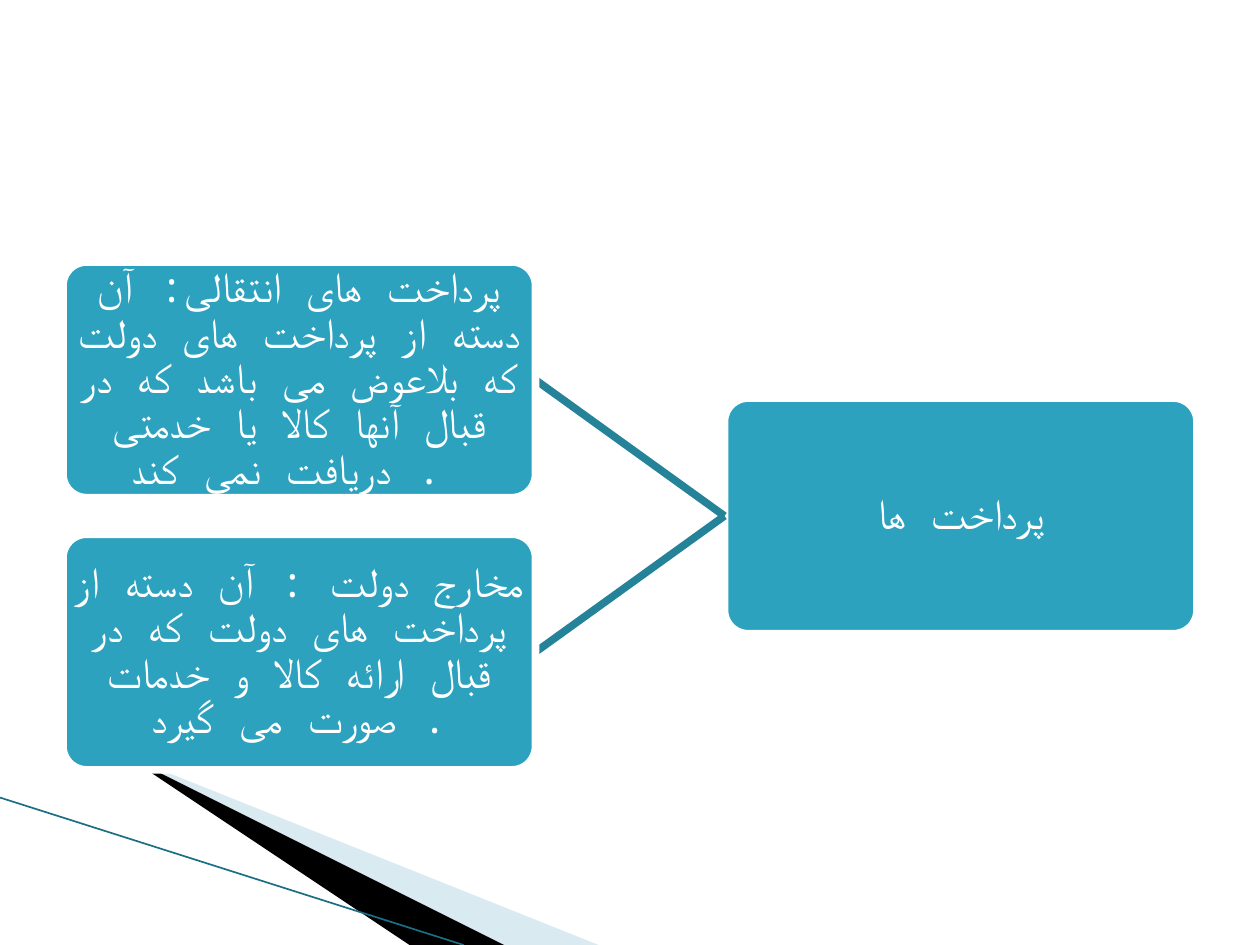
"""Build a slide that splits payments into two kinds."""
from lxml import etree
from pptx import Presentation
from pptx import util as u
from pptx.dml.color import RGBColor
from pptx.enum import shapes, text
from pptx.oxml.ns import qn

WIDE, HIGH = 10, 7.5
BOX_W, BOX_H = 3.75, 1.87
LEFT, RIGHT = 0.5, 5.75
TOP, STEP = 2.08, 2.16
FONT = "Noto Sans Mono"
HUES = {"box": "2DA2BF", "link": "248299", "edge": "FFFFFF",
        "pale": "A0CBDC", "dark": "000000", "rim": "1B6F83"}
FRAME = {"word_wrap": True, "vertical_anchor": text.MSO_ANCHOR.MIDDLE,
         **{f"margin_{side}": u.Inches(0.02)
            for side in ("left", "right", "top", "bottom")}}
PARA = {"alignment": text.PP_ALIGN.CENTER, "line_spacing": 0.9}
TYPE = {"name": FONT, "size": u.Pt(24)}
ROOT = "پرداخت ها"
KINDS = [
    "پرداخت های انتقالی: آن دسته از پرداخت های دولت که بلاعوض می باشد "
    "که در قبال آنها کالا یا خدمتی دریافت نمی کند . ",
    "مخارج دولت : آن دسته از پرداخت های دولت که در قبال ارائه کالا و "
    "خدمات صورت می گیرد .",
]
WEDGES = [
    ("pale", 40, [(0.55, 6.5), (5.9, HIGH), (4.56, HIGH)]),
    ("dark", 100, [(0.53, 6.49), (4.53, HIGH), (3.68, HIGH)]),
]


def hue(name):
    """Return a named colour."""
    return RGBColor.from_string(HUES[name])


def style(item, form):
    """Set the attributes of an item from a dict."""
    for key, value in form.items():
        setattr(item, key, value)


def wedge(slide, name, alpha, points):
    """Draw a filled outline through the points."""
    pen = slide.shapes.build_freeform(*points[0], scale=u.Inches(1))
    pen.add_line_segments(points[1:], close=True)
    shape = pen.convert_to_shape()
    shape.shadow.inherit = False
    shape.fill.solid()
    shape.fill.fore_color.rgb = hue(name)
    shape.line.fill.background()
    if alpha < 100:
        tint = shape.fill._xPr.find(".//" + qn("a:srgbClr"))
        etree.SubElement(tint, qn("a:alpha"), val=str(alpha * 1000))


def link(slide, start, end, name, width):
    """Draw a straight line between two points."""
    ends = [u.Inches(n) for n in (*start, *end)]
    line = slide.shapes.add_connector(shapes.MSO_CONNECTOR.STRAIGHT, *ends)
    line.line.color.rgb = hue(name)
    line.line.width = u.Pt(width)
    etree.SubElement(line._element.spPr, qn("a:effectLst"))


def box(slide, left, top, words):
    """Draw a rounded box with centred words."""
    area = [u.Inches(n) for n in (left, top, BOX_W, BOX_H)]
    shape = slide.shapes.add_shape(
        shapes.MSO_SHAPE.ROUNDED_RECTANGLE, *area)
    shape.adjustments[0] = 0.1
    shape.shadow.inherit = False
    shape.fill.solid()
    shape.fill.fore_color.rgb = hue("box")
    shape.line.color.rgb = hue("edge")
    shape.line.width = u.Pt(4.33)
    style(shape.text_frame, FRAME)
    para = shape.text_frame.paragraphs[0]
    style(para, PARA)
    run = para.add_run()
    run.text = words
    style(run.font, TYPE)
    run.font.color.rgb = hue("edge")
    etree.SubElement(run._r.rPr, qn("a:cs"), typeface=FONT)


def main():
    """Build and save the slide."""
    deck = Presentation()
    style(deck, {"slide_width": u.Inches(WIDE),
                 "slide_height": u.Inches(HIGH)})
    slide = deck.slides.add_slide(deck.slide_layouts[6])
    for part in WEDGES:
        wedge(slide, *part)
    link(slide, (0, 6.33), (3.68, HIGH), "rim", 0.95)
    root = TOP + STEP / 2
    box(slide, RIGHT, root, ROOT)
    for row, words in enumerate(KINDS):
        top = TOP + row * STEP
        link(slide, (RIGHT, root + BOX_H / 2),
             (LEFT + BOX_W, top + BOX_H / 2), "link", 4.33)
        box(slide, LEFT, top, words)
    deck.save("out.pptx")


if __name__ == "__main__":
    main()
